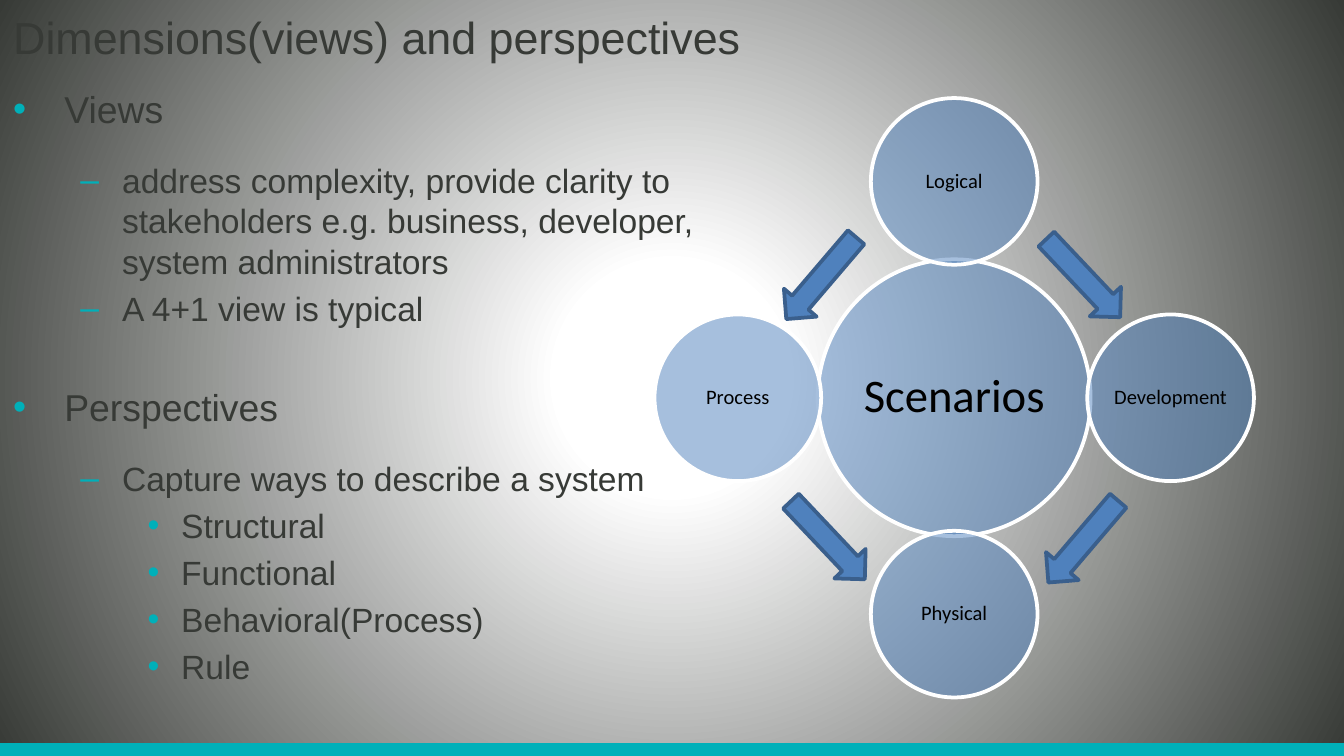
from lxml import etree
from pptx import Presentation
from pptx import util as u
from pptx.dml.color import RGBColor
from pptx.enum import shapes, text
from pptx.oxml import ns, parse_xml

WIDTH = 10
HEIGHT = WIDTH * 9 / 16
INK, TEAL, BLUE, NAVY, WHITE, BLACK = (
    "373A36", "00B0B9", "4F81BD", "3A5F8C", "FFFFFF", "000000")
HUB_X, HUB_Y = 0.71 * WIDTH, 2.96
ORBIT = 1.61
BAR_TOP = 5.53

# Outline level: bullet, text indent, hanging indent, size, space before and after
LEVELS = [("•", 0.38, 0.38, 20, 30, 12),
          ("–", 0.81, 0.31, 18, 3.6, 0),
          ("•", 1.25, 0.25, 18, 3.6, 0)]
OUTLINE = [
    (0, "Views"),
    (1, "address complexity, provide clarity to stakeholders e.g. business, "
        "developer, system administrators"),
    (1, "A 4+1 view is typical"),
    (0, "Perspectives"),
    (1, "Capture ways to describe a system"),
    (2, "Structural"),
    (2, "Functional"),
    (2, "Behavioral(Process)"),
    (2, "Rule"),
]
# View: steps from the hub across and down
VIEWS = [("Logical", 0, -1), ("Development", 1, 0), ("Physical", 0, 1), ("Process", -1, 0)]
# Arrow: centre across and down, rotation
ARROWS = [(8.06, 2.07, 46.6), (6.11, 2.07, 130.5), (6.16, 4.02, 46.6), (8.06, 4.03, 130.5)]


def rgb(color):
    return RGBColor.from_string(color)


def box(left, top, width, height):
    return [u.Inches(length) for length in (left, top, width, height)]


def centred(x, y, width, height):
    return box(x - width / 2, y - height / 2, width, height)


def write(paragraph, words, size=18, font="Arial", color=INK, align=None,
          before=0, after=0, leading=None):
    run = paragraph.add_run()
    run.text = words
    run.font.size, run.font.name = u.Pt(size), font
    run.font.color.rgb = rgb(color)
    paragraph.alignment = align
    paragraph.space_before, paragraph.space_after = u.Pt(before), u.Pt(after)
    paragraph.line_spacing = leading


def add_bullet(paragraph, mark, indent, hanging):
    properties = paragraph._p.get_or_add_pPr()
    properties.set("marL", str(u.Inches(indent)))
    properties.set("indent", str(-u.Inches(hanging)))
    color = etree.SubElement(properties, ns.qn("a:buClr"))
    etree.SubElement(color, ns.qn("a:srgbClr"), val=TEAL)
    etree.SubElement(properties, ns.qn("a:buFont"), typeface="Arial")
    etree.SubElement(properties, ns.qn("a:buChar"), char=mark)


def add_figure(slide, kind, place, fill, line=None, opacity=100):
    figure = slide.shapes.add_shape(kind, *place)
    figure.shadow.inherit = False
    figure.fill.solid()
    figure.fill.fore_color.rgb = rgb(fill)
    if opacity < 100:
        color = figure._element.spPr.find(".//" + ns.qn("a:srgbClr"))
        etree.SubElement(color, ns.qn("a:alpha"), val=str(opacity * 1000))
    if line:
        figure.line.color.rgb = rgb(line)
        figure.line.width = u.Pt(2)
    else:
        figure.line.fill.background()
    return figure


def add_circle(slide, label, place, size, inset=0):
    circle = add_figure(slide, shapes.MSO_SHAPE.OVAL, place, BLUE, WHITE, 50)
    frame = circle.text_frame
    frame.word_wrap = True
    frame.vertical_anchor = text.MSO_ANCHOR.MIDDLE
    frame.margin_left = frame.margin_right = u.Inches(inset)
    frame.margin_top = frame.margin_bottom = u.Inches(inset)
    write(frame.paragraphs[0], label, size=size, font="Calibri", color=BLACK,
          align=text.PP_ALIGN.CENTER, leading=0.9)


def add_text_area(slide, place, anchor):
    frame = slide.shapes.add_textbox(*place).text_frame
    frame.word_wrap = True
    frame.vertical_anchor = anchor
    return frame


def paint_background(slide):
    """Radial gradient from a white centre to dark edges."""
    slide.background.fill.solid()
    properties = slide.background._cSld.bg.bgPr
    solid = properties.find(ns.qn("a:solidFill"))
    properties.replace(solid, parse_xml(
        f'<a:gradFill {ns.nsdecls("a")} rotWithShape="1"><a:gsLst>'
        f'<a:gs pos="15000"><a:srgbClr val="{WHITE}"/></a:gs>'
        f'<a:gs pos="100000"><a:srgbClr val="{INK}"/></a:gs></a:gsLst>'
        '<a:path path="circle"><a:fillToRect l="50000" t="50000" r="50000" b="50000"/>'
        '</a:path></a:gradFill>'))


def add_outline(slide):
    frame = add_text_area(slide, box(0, 0.59, 6.12, 4.95), text.MSO_ANCHOR.TOP)
    for number, (level, words) in enumerate(OUTLINE):
        mark, indent, hanging, size, before, after = LEVELS[level]
        paragraph = frame.add_paragraph() if number else frame.paragraphs[0]
        paragraph.level = level
        add_bullet(paragraph, mark, indent, hanging)
        write(paragraph, words, size=size, before=before if number else 0, after=after)


def add_view_model(slide):
    add_circle(slide, "Scenarios", centred(HUB_X, HUB_Y, 2.03, 2.06), 25, 0.03)
    for label, across, down in VIEWS:
        place = centred(HUB_X + across * ORBIT, HUB_Y + down * ORBIT, 1.24, 1.24)
        add_circle(slide, label, place, 11)
    for x, y, rotation in ARROWS:
        arrow = add_figure(slide, shapes.MSO_SHAPE.RIGHT_ARROW,
                           centred(x, y, 0.8, 0.32), BLUE, NAVY)
        arrow.rotation = rotation


def main():
    deck = Presentation()
    deck.slide_width, deck.slide_height = u.Inches(WIDTH), u.Inches(HEIGHT)
    slide = deck.slides.add_slide(deck.slide_layouts[6])
    paint_background(slide)
    add_figure(slide, shapes.MSO_SHAPE.RECTANGLE,
               box(0, BAR_TOP, WIDTH, HEIGHT - BAR_TOP), TEAL)
    title = add_text_area(slide, box(0, 0, 0.9 * WIDTH, 0.54), text.MSO_ANCHOR.MIDDLE)
    write(title.paragraphs[0], "Dimensions(views) and perspectives", size=24)
    add_outline(slide)
    add_view_model(slide)
    deck.save("out.pptx")


if __name__ == "__main__":
    main()
